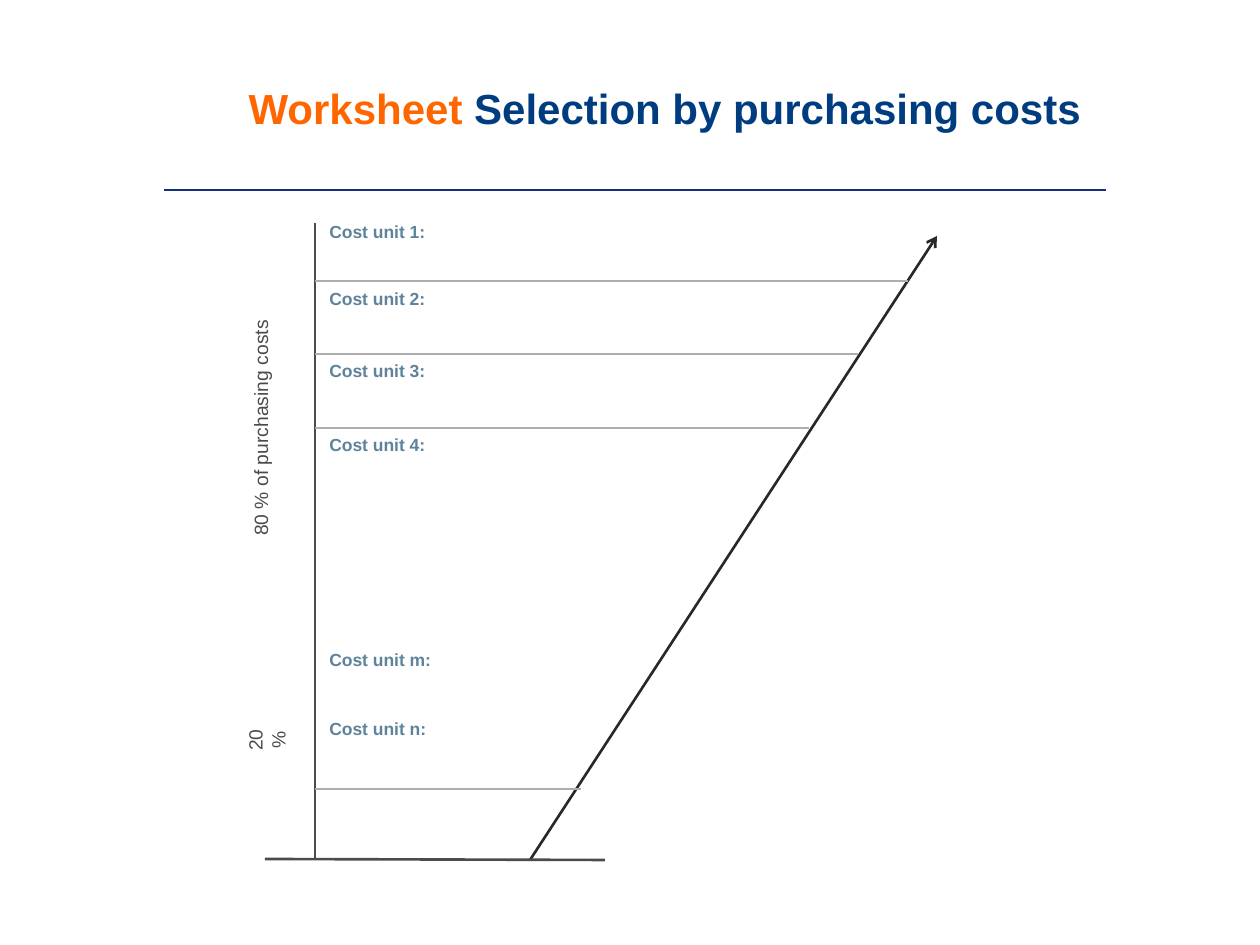
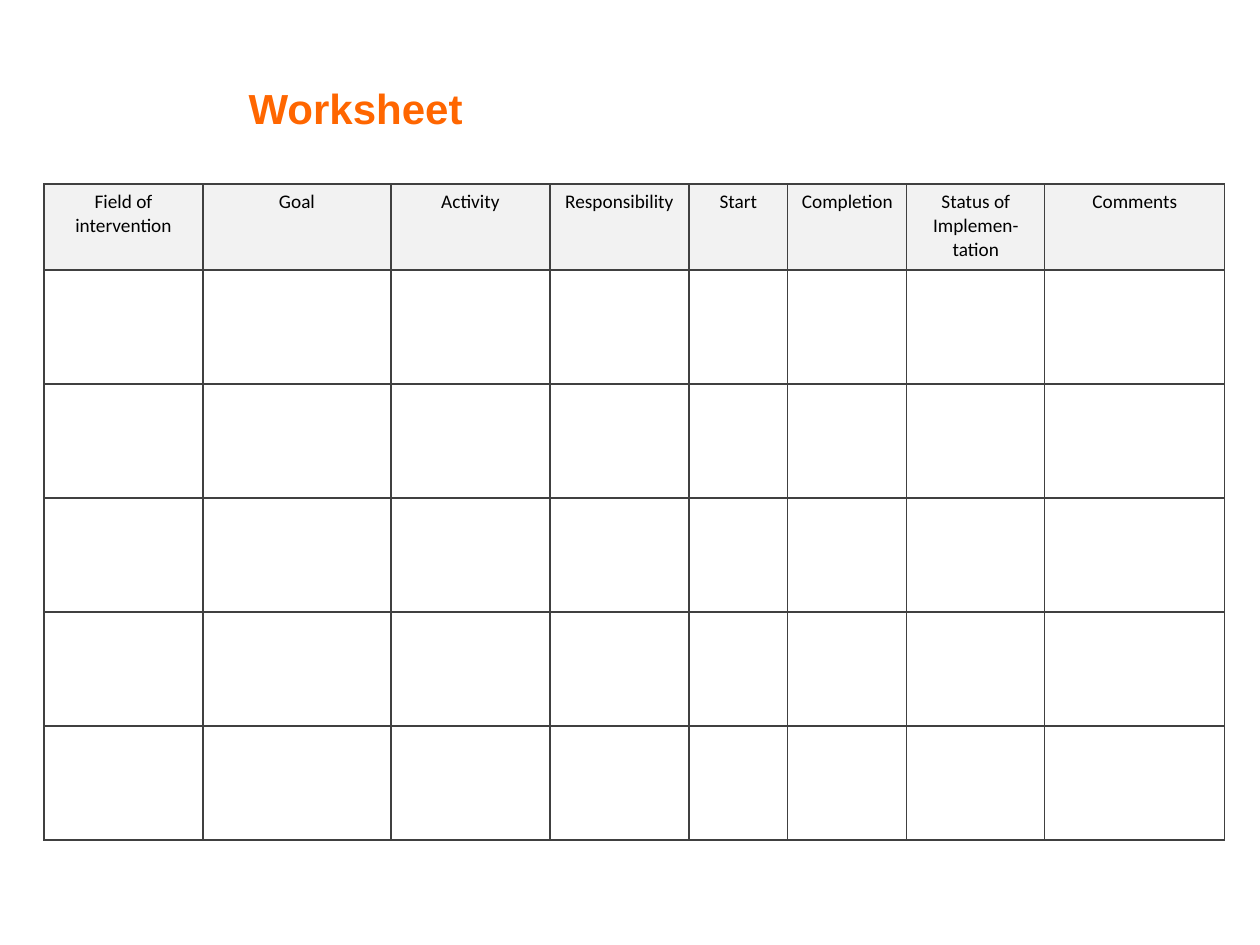
from lxml.etree import SubElement
from pptx import Presentation
from pptx.dml.color import RGBColor
from pptx.enum.shapes import MSO_CONNECTOR as CONN
from pptx.enum.text import MSO_ANCHOR as ANCHOR, MSO_AUTO_SIZE as AUTO, PP_ALIGN as ALIGN
from pptx.oxml.ns import qn
from pptx.util import Emu, Pt

SCALE = 914400 / 126
ORANGE, BLUE, RULE = "FF6600", "003C80", "133176"
STEEL, DARK, INK, GREY = "5E839A", "4B4B4B", "282828", "AEAEAE"
BORDER, HEADER, BLACK = "404040", "F2F2F2", "000000"

TITLE_FONT = {"name": "Arial", "size": Pt(24), "bold": True}
UNIT_FONT = {"name": "Arial", "size": Pt(10), "bold": True}
SHARE_FONT = {"name": "Arial", "size": Pt(11), "bold": False}
HEAD_FONT = {"name": "Calibri", "size": Pt(11), "bold": False}

BARS = [(58, 593), (131, 543), (205, 494), (566, 266)]
UNITS = [("1", -8), ("2", 59), ("3", 131), ("4", 205), ("m", 420), ("n", 489)]
SHARES = [("80 % of purchasing costs", -79, 62, 286), ("20 %", -73, 483, 68)]
COLUMNS = [("Field of intervention", 159), ("Goal", 188), ("Activity", 159),
           ("Responsibility", 139), ("Start", 99), ("Completion", 119),
           ("Status of Implemen-tation", 138), ("Comments", 180)]


def px(n):
    """Turn pixels into EMU."""
    return Emu(round(n * SCALE))


def rgb(color):
    """Turn a hex string into a colour."""
    return RGBColor.from_string(color)


def add_run(p, text, color, font):
    """Add a formatted run to a paragraph."""
    r = p.add_run()
    r.text = text
    for key, value in font.items():
        setattr(r.font, key, value)
    r.font.color.rgb = rgb(color)


def add_line(s, x1, y1, x2, y2, color, width=1.5, arrow=False):
    """Draw a straight line, with an arrowhead at its end if asked."""
    line = s.shapes.add_connector(CONN.STRAIGHT, px(x1), px(y1), px(x2), px(y2))
    line.line.color.rgb = rgb(color)
    line.line.width = Pt(width)
    sp_pr = line.element.spPr
    if arrow:
        SubElement(sp_pr.find(qn("a:ln")), qn("a:tailEnd"), type="arrow")
    SubElement(sp_pr, qn("a:effectLst"))
    return line


def add_text(s, x, y, w, h, text, color, font):
    """Add a wrapping text box and return it."""
    sp = s.shapes.add_textbox(px(x), px(y), px(w), px(h))
    tf = sp.text_frame
    tf.word_wrap = True
    add_run(tf.paragraphs[0], text, color, font)
    return sp


def set_up_layout(layout, s):
    """Give the layout its title box and the rule below it."""
    title = layout.placeholders[0]
    box = {"left": 236, "top": 38, "width": 871, "height": 140}
    for key, value in box.items():
        setattr(title, key, px(value))
    rule = add_line(s, 164, 190, 1106, 190, RULE, 0.75)
    layout.shapes.element.append(rule.element)


def fill_title(s, *parts):
    """Write the title from pairs of text and colour."""
    tf = s.shapes.title.text_frame
    tf.auto_size = AUTO.NONE
    tf.vertical_anchor = ANCHOR.MIDDLE
    p = tf.paragraphs[0]
    p.alignment = ALIGN.LEFT
    p.space_before = Pt(0)
    for text, color in parts:
        add_run(p, text, color, TITLE_FONT)


def cost_diagram(s, x, y):
    """Draw the cost pyramid with the top of its axis at x, y."""
    add_line(s, x, y, x, y + 636, DARK)
    add_line(s, x + 215, y + 637, x + 622, y + 13, INK, arrow=True)
    add_line(s, x - 50, y + 636, x + 290, y + 637, DARK)
    for top, end in BARS:
        add_line(s, x, y + top, x + end, y + top, GREY)
    for unit, top in UNITS:
        add_text(s, x + 2, y + top, 440, 39, f"Cost unit {unit}:", STEEL, UNIT_FONT)
    for text, left, top, h in SHARES:
        sp = add_text(s, x + left, y + top, 49, h, text, DARK, SHARE_FONT)
        sp.element.txBody.bodyPr.set("vert", "vert270")
        sp.text_frame.vertical_anchor = ANCHOR.MIDDLE
        sp.text_frame.paragraphs[0].alignment = ALIGN.CENTER


def add_borders(cell):
    """Draw the four borders of a cell."""
    tc_pr = cell._tc.get_or_add_tcPr()
    for side in "LRTB":
        ln = SubElement(tc_pr, qn(f"a:ln{side}"), w=str(Pt(0.75)))
        SubElement(SubElement(ln, qn("a:solidFill")), qn("a:srgbClr"), val=BORDER)


def action_table(s, x, y, head_h=86, row_h=114, rows=5):
    """Add the empty action plan with its header row."""
    width = sum(w for _, w in COLUMNS)
    frame = s.shapes.add_table(rows + 1, len(COLUMNS), px(x), px(y),
                               px(width), px(head_h + rows * row_h))
    table = frame.table
    table.first_row = table.horz_banding = False
    for i, row in enumerate(table.rows):
        row.height = px(row_h if i else head_h)
        for cell in row.cells:
            add_borders(cell)
            if i:
                cell.fill.background()
            else:
                cell.fill.solid()
                cell.fill.fore_color.rgb = rgb(HEADER)
    for i, (text, w) in enumerate(COLUMNS):
        table.columns[i].width = px(w)
        p = table.cell(0, i).text_frame.paragraphs[0]
        p.alignment = ALIGN.CENTER
        add_run(p, text, BLACK, HEAD_FONT)


def main():
    """Build both worksheets and save them."""
    prs = Presentation()
    prs.slide_width, prs.slide_height = px(1260), px(945)
    layout = prs.slide_layouts[5]

    s = prs.slides.add_slide(layout)
    set_up_layout(layout, s)
    fill_title(s, ("Worksheet ", ORANGE), ("Selection by purchasing costs", BLUE))
    cost_diagram(s, 315, 223)

    s = prs.slides.add_slide(layout)
    fill_title(s, ("Worksheet", ORANGE))
    action_table(s, 44, 184)

    prs.save("out.pptx")


if __name__ == "__main__":
    main()
